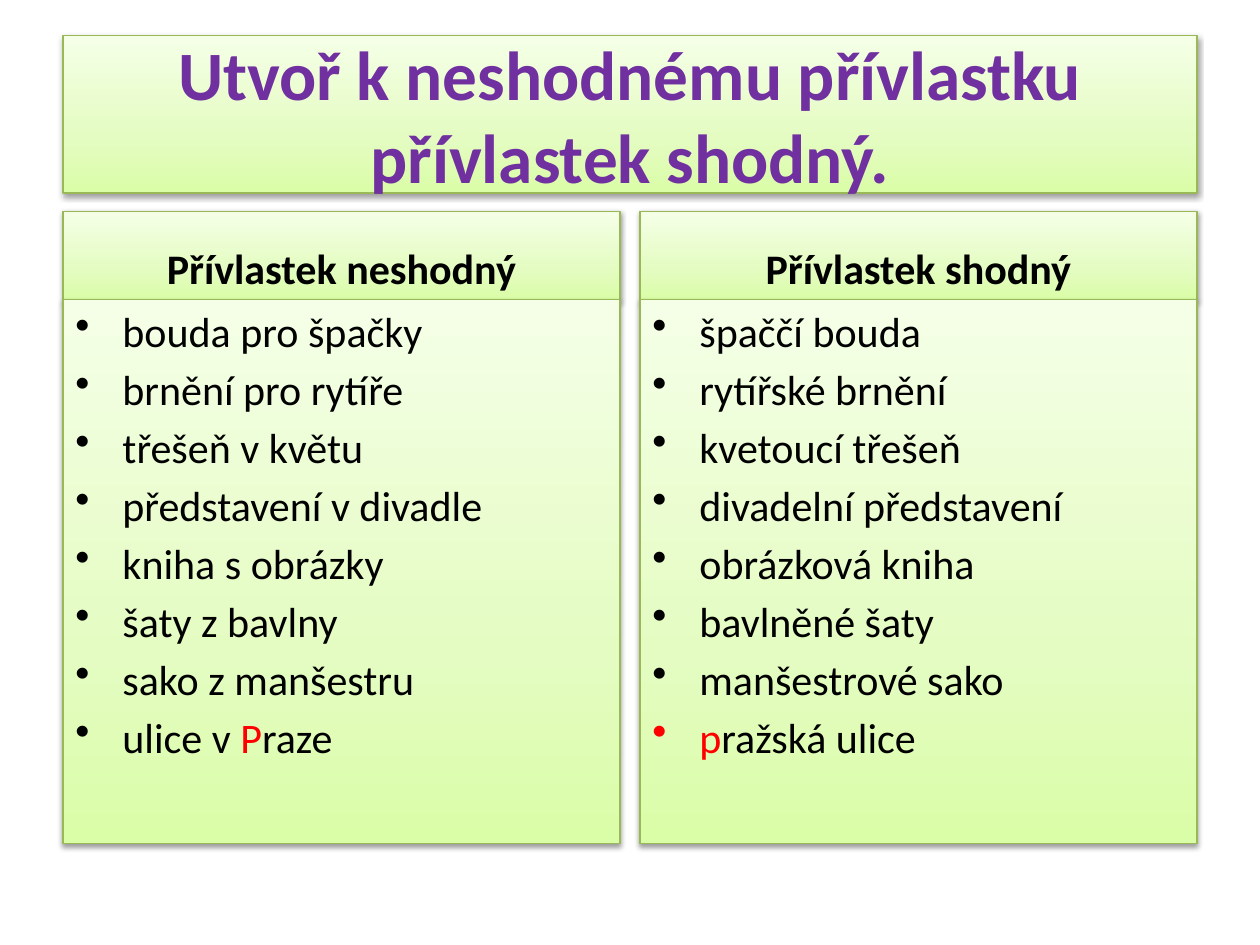
from copy import deepcopy

from lxml.etree import SubElement
from pptx import Presentation
from pptx.dml.color import RGBColor
from pptx.enum.shapes import MSO_SHAPE as Kind
from pptx.enum.text import MSO_ANCHOR as Anchor, PP_ALIGN as Align
from pptx.oxml.ns import qn
from pptx.util import Cm, Pt

TITLE = "Utvoř k neshodnému přívlastku přívlastek shodný."
# A list item is a text, or a tuple of runs where * marks a red one.
COLS = [
    ("Přívlastek neshodný", [
        "bouda pro špačky", "brnění pro rytíře", "třešeň v květu",
        "představení v divadle", "kniha s obrázky", "šaty z bavlny",
        "sako z manšestru", ("ulice v ", "*P", "raze")]),
    ("Přívlastek shodný", [
        "špaččí bouda", "rytířské brnění", "kvetoucí třešeň",
        "divadelní představení", "obrázková kniha", "bavlněné šaty",
        "manšestrové sako", ("*p", "ražská ulice")]),
]
STOPS = [(0, "DAFDA7"), (0.35, "E4FCC2"), (1, "F5FFE7")]
EDGE, PURPLE, BLACK, RED = "98B955", "7030A0", "000000", "FF0000"

# Lengths in cm
LEFT, WIDE, GAP = 1.27, 22.86, 0.4
TITLE_TOP, TITLE_H = 0.71, 3.18
HEAD_TOP, HEAD_H, LIST_H = 4.26, 1.78, 10.97
INDENT = 0.95


def rgb(code):
    return RGBColor.from_string(code)


def add_shade(shape):
    """Give the shape a soft shadow straight below it."""
    shape.shadow.inherit = False
    effects = shape._element.spPr.find(qn("a:effectLst"))
    outer = SubElement(effects, qn("a:outerShdw"), blurRad="40000",
                       dist="20000", dir="5400000", rotWithShape="0")
    color = SubElement(outer, qn("a:srgbClr"), val=BLACK)
    SubElement(color, qn("a:alpha"), val="38000")


def add_panel(slide, x, y, w, h, anchor):
    """Draw a green panel and return its text frame."""
    shape = slide.shapes.add_shape(Kind.RECTANGLE, Cm(x), Cm(y), Cm(w), Cm(h))
    fill = shape.fill
    fill.gradient()
    fill.gradient_angle = 90
    stops = shape._element.spPr.find(qn("a:gradFill")).find(qn("a:gsLst"))
    stops.append(deepcopy(stops[-1]))
    for stop, (place, code) in zip(fill.gradient_stops, STOPS):
        stop.position = place
        stop.color.rgb = rgb(code)
    shape.line.color.rgb = rgb(EDGE)
    shape.line.width = Pt(0.75)
    add_shade(shape)
    frame = shape.text_frame
    frame.word_wrap = True
    frame.vertical_anchor = anchor
    return frame


def style(para, size, color=BLACK, bold=False, align=Align.CENTER):
    para.alignment = align
    font = para.font
    font.name, font.size, font.bold = "Calibri", Pt(size), bold
    font.color.rgb = rgb(color)


def add_item(para, item):
    """Fill one bulleted paragraph."""
    style(para, 24, align=Align.LEFT)
    para.space_before = Pt(4.3)
    props = para._p.get_or_add_pPr()
    props.set("marL", str(Cm(INDENT)))
    props.set("indent", str(-Cm(INDENT)))
    bullet = props.makeelement(qn("a:buChar"), {"char": "•"})
    props.find(qn("a:defRPr")).addprevious(bullet)
    for part in (item,) if isinstance(item, str) else item:
        run = para.add_run()
        run.text = part.lstrip("*")
        run.font.color.rgb = rgb(RED if part.startswith("*") else BLACK)


def main():
    deck = Presentation()
    deck.slide_width, deck.slide_height = Cm(25.4), Cm(19.05)
    slide = deck.slides.add_slide(deck.slide_layouts[6])

    frame = add_panel(slide, LEFT, TITLE_TOP, WIDE, TITLE_H, Anchor.MIDDLE)
    frame.text = TITLE
    style(frame.paragraphs[0], 39.6, PURPLE, True)

    width = (WIDE - GAP) / 2
    for i, (head, items) in enumerate(COLS):
        x = LEFT + i * (width + GAP)
        frame = add_panel(slide, x, HEAD_TOP, width, HEAD_H, Anchor.BOTTOM)
        frame.text = head
        style(frame.paragraphs[0], 24, bold=True)
        frame = add_panel(slide, x, HEAD_TOP + HEAD_H, width, LIST_H,
                          Anchor.TOP)
        for n, item in enumerate(items):
            para = frame.add_paragraph() if n else frame.paragraphs[0]
            add_item(para, item)

    deck.save("out.pptx")


if __name__ == "__main__":
    main()
